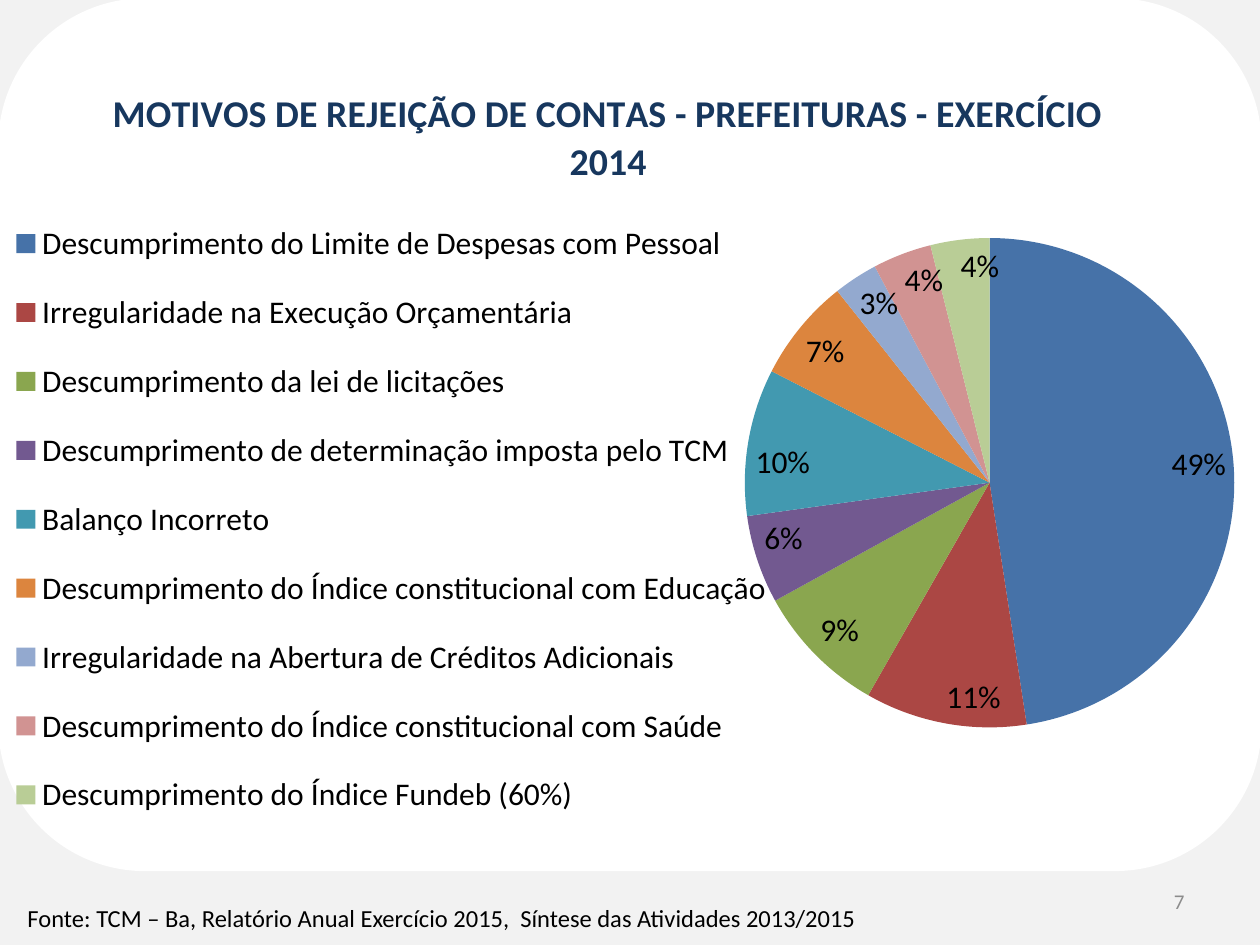
"""Build the slide on reasons for rejecting the 2014 accounts, with its pie chart."""
from lxml import etree
from pptx import Presentation
from pptx import util as u
from pptx.chart import data
from pptx.dml.color import RGBColor
from pptx.enum import chart as ch, shapes, text
from pptx.oxml import ns

COLORS = {"page": "F2F2F2", "panel": "FFFFFF", "title": "17375E", "text": "000000", "number": "8C8C8C"}
FONT = "Calibri"
TITLE = "MOTIVOS DE REJEIÇÃO DE CONTAS - PREFEITURAS - EXERCÍCIO 2014"
REASONS = [
    ("Descumprimento do Limite de Despesas com Pessoal", 49, "4672A8"),
    ("Irregularidade na Execução Orçamentária", 11, "AB4744"),
    ("Descumprimento da lei de licitações", 9, "8AA64F"),
    ("Descumprimento de determinação imposta pelo TCM", 6, "725990"),
    ("Balanço Incorreto", 10, "4299B0"),
    ("Descumprimento do Índice constitucional com Educação", 7, "DC853E"),
    ("Irregularidade na Abertura de Créditos Adicionais", 3, "93A9CF"),
    ("Descumprimento do Índice constitucional com Saúde", 4, "D19392"),
    ("Descumprimento do Índice Fundeb (60%)", 4, "B9CD96"),
]


def style(font, size, color, bold=False):
    font.name, font.size, font.bold = FONT, u.Pt(size), bold
    font.color.rgb = RGBColor.from_string(COLORS[color])


def place(part, index, **settings):
    for old in part.findall(ns.qn("c:layout")):
        part.remove(old)
    layout = etree.Element(ns.qn("c:layout"))
    manual = etree.SubElement(layout, ns.qn("c:manualLayout"))
    for name, value in settings.items():
        etree.SubElement(manual, ns.qn(f"c:{name}"), val=str(value))
    part.insert(index, layout)


deck = Presentation()
deck.slide_width, deck.slide_height = u.Inches(10), u.Inches(7.5)
page = deck.slides.add_slide(deck.slide_layouts[6])
page.background.fill.solid()
page.background.fill.fore_color.rgb = RGBColor.from_string(COLORS["page"])

panel = page.shapes.add_shape(shapes.MSO_SHAPE.ROUNDED_RECTANGLE, 0, 0, deck.slide_width, u.Inches(6.9))
panel.shadow.inherit = False
panel.fill.solid()
panel.fill.fore_color.rgb = panel.line.color.rgb = RGBColor.from_string(COLORS["panel"])
panel.line.width = u.Pt(2)

pie_data = data.CategoryChartData(number_format='0"%"')
pie_data.categories = [reason for reason, share, color in REASONS]
pie_data.add_series(TITLE, [share for reason, share, color in REASONS])
frame = page.shapes.add_chart(
    ch.XL_CHART_TYPE.PIE, u.Inches(-0.67), u.Inches(0.44), u.Inches(10.79), u.Inches(6.46), pie_data)
chart = frame.chart
style(chart.font, 18, "text")

chart.has_title = True
heading = chart.chart_title.text_frame
heading.text = TITLE
style(heading.paragraphs[0].font, 21.6, "title", bold=True)

chart.has_legend = True
chart.legend.position = ch.XL_LEGEND_POSITION.TOP
chart.legend.include_in_layout = False
style(chart.legend.font, 18, "text")

plot = chart.plots[0]
plot.vary_by_categories = True
plot.has_data_labels = True
labels = plot.data_labels
labels.show_value = True
labels.number_format, labels.number_format_is_linked = '0"%"', False
labels.position = ch.XL_LABEL_POSITION.INSIDE_END
style(labels.font, 18, "text")
for index, (reason, share, color) in enumerate(REASONS):
    fill = plot.series[0].points[index].format.fill
    fill.solid()
    fill.fore_color.rgb = RGBColor.from_string(color)

edges = {"xMode": "edge", "yMode": "edge"}
place(chart.element.xpath("//c:chart/c:title")[0], 1, **edges, x=0.14, y=0.03)
place(chart.element.xpath("//c:legend")[0], 1, **edges, x=0.06, y=0.17, w=0.58, h=0.8)
place(chart.element.xpath("//c:plotArea")[0], 0, layoutTarget="inner", **edges, x=0.61, y=0.22, w=0.36, h=0.61)

for words, left, top, width, height, size, color, align in [
    ("Fonte: TCM – Ba, Relatório Anual Exercício 2015,  Síntese das Atividades 2013/2015",
     0.12, 7.11, 7.24, 0.34, 14, "text", text.PP_ALIGN.LEFT),
    ("7", 7.17, 6.95, 2.33, 0.4, 12, "number", text.PP_ALIGN.RIGHT),
]:
    box = page.shapes.add_textbox(u.Inches(left), u.Inches(top), u.Inches(width), u.Inches(height)).text_frame
    box.word_wrap = True
    box.vertical_anchor = text.MSO_ANCHOR.MIDDLE
    para = box.paragraphs[0]
    para.text, para.alignment = words, align
    style(para.font, size, color)

deck.save("out.pptx")
